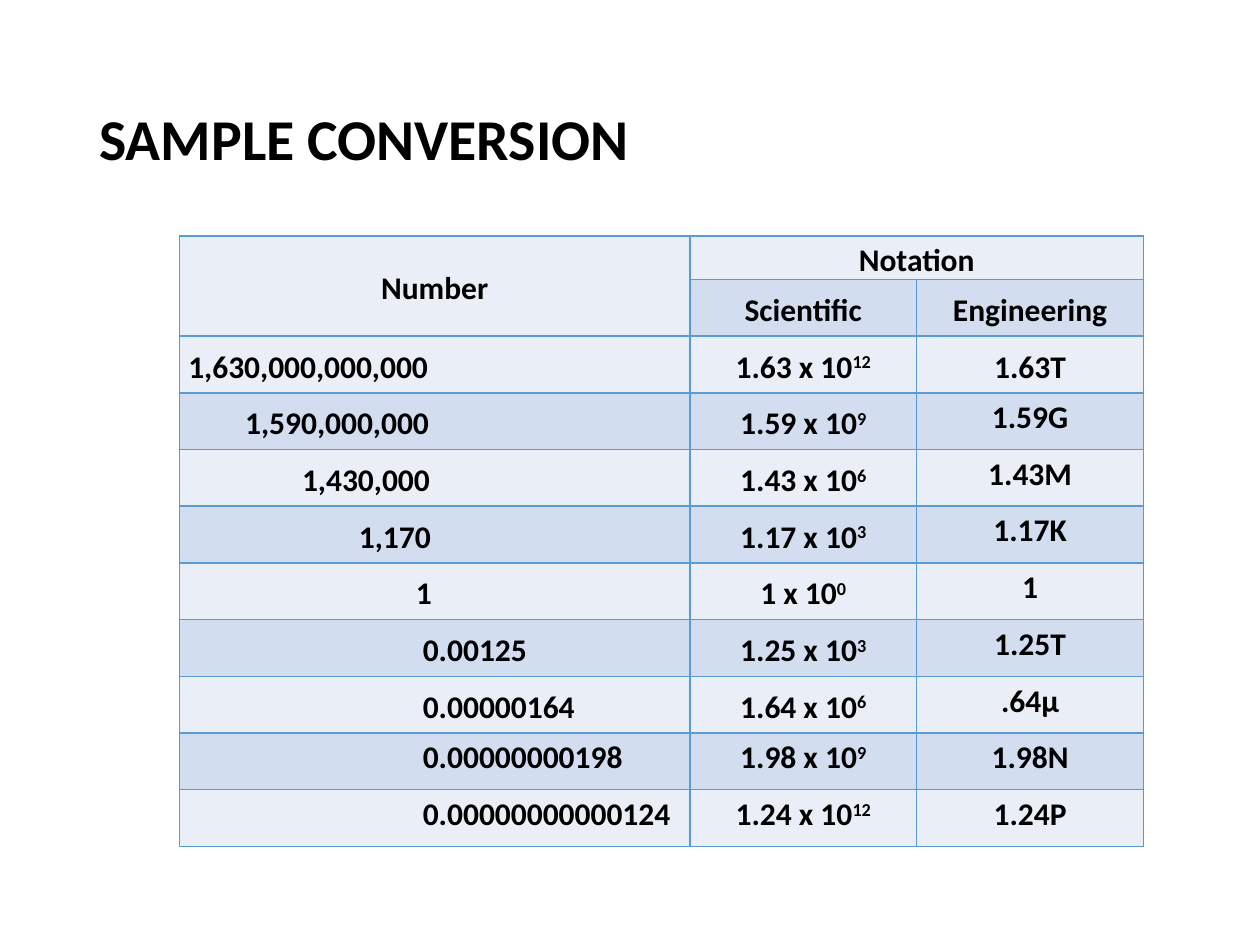
from lxml.etree import SubElement
from pptx import Presentation
from pptx.dml.color import RGBColor
from pptx.enum.text import MSO_ANCHOR as Anchor, PP_ALIGN as Align
from pptx.oxml.ns import qn
from pptx.util import Pt

BLACK = RGBColor(0x00, 0x00, 0x00)
LIGHT = RGBColor(0xEA, 0xEF, 0xF7)
DARK = RGBColor(0xD2, 0xDE, 0xEF)
BORDER = RGBColor(0x5B, 0x9B, 0xD5)
FONT = "Calibri"

TITLE = "SAMPLE CONVERSION"
HEADINGS = [("Number", "Notation", ""), ("", "Scientific", "Engineering")]
CONVERSIONS = [
    ("1,630,000,000,000", "1.63 x 10", "12", "1.63T"),
    ("1,590,000,000", "1.59 x 10", "9", "1.59G"),
    ("1,430,000", "1.43 x 10", "6", "1.43M"),
    ("1,170", "1.17 x 10", "3", "1.17K"),
    ("1", "1 x 10", "0", "1"),
    ("0.00125", "1.25 x 10", "3", "1.25T"),
    ("0.00000164", "1.64 x 10", "6", ".64μ"),
    ("0.00000000198", "1.98 x 10", "9", "1.98N"),
    ("0.00000000000124", "1.24 x 10", "12", "1.24P"),
]
COLUMN_WIDTHS = [291.6, 129.6, 129.6]
FIRST_ROW_HEIGHT, ROW_HEIGHT = 24, 32.4
TABLE_LEFT, TABLE_TOP = 102.6, 134.8
GROUP_INDENT, DECIMAL_INDENT = 32.5, 134
FIRST_TOP_ALIGNED = [9, 9, 3]


def style_font(paragraph, size):
    font = paragraph.font
    font.name, font.size, font.bold = FONT, Pt(size), True
    font.color.rgb = BLACK


def add_borders(cell):
    properties = cell._tc.get_or_add_tcPr()
    for side in ("a:lnL", "a:lnR", "a:lnT", "a:lnB"):
        line = SubElement(properties, qn(side), w=str(Pt(1)))
        fill = SubElement(line, qn("a:solidFill"))
        SubElement(fill, qn("a:srgbClr"), val=str(BORDER))


def fill_cell(cell, row, column, text, exponent=""):
    add_borders(cell)
    cell.fill.solid()
    cell.fill.fore_color.rgb = DARK if row % 2 else LIGHT
    cell.margin_left = cell.margin_right = Pt(5)
    cell.margin_top = cell.margin_bottom = 0
    top_aligned = row >= FIRST_TOP_ALIGNED[column]
    cell.vertical_anchor = Anchor.TOP if top_aligned else Anchor.MIDDLE
    paragraph = cell.text_frame.paragraphs[0]
    paragraph.alignment = Align.CENTER
    paragraph.line_spacing = 1.15
    style_font(paragraph, 18)
    if text:
        paragraph.add_run().text = text
    if exponent:
        run = paragraph.add_run()
        run.text = exponent
        run.font._element.set("baseline", "30000")
    return paragraph


def align_number(paragraph, number, index):
    indent = DECIMAL_INDENT if "." in number else index * GROUP_INDENT
    paragraph.alignment = Align.LEFT
    properties = paragraph._p.get_or_add_pPr()
    properties.set("marL", str(Pt(indent)))
    properties.set("indent", "0")


def add_title(slide):
    box = slide.shapes.add_textbox(Pt(49.7), Pt(28.8), Pt(620.6), Pt(104.4))
    frame = box.text_frame
    frame.word_wrap = True
    frame.vertical_anchor = Anchor.MIDDLE
    paragraph = frame.paragraphs[0]
    paragraph.text = TITLE
    paragraph.line_spacing = 0.9
    style_font(paragraph, 33)


def add_conversion_table(slide):
    row_count = len(HEADINGS) + len(CONVERSIONS)
    heights = [FIRST_ROW_HEIGHT] + [ROW_HEIGHT] * (row_count - 1)
    table = slide.shapes.add_table(
        row_count, len(COLUMN_WIDTHS), Pt(TABLE_LEFT), Pt(TABLE_TOP),
        Pt(sum(COLUMN_WIDTHS)), Pt(sum(heights))).table
    for column, width in zip(table.columns, COLUMN_WIDTHS):
        column.width = Pt(width)
    for row, height in zip(table.rows, heights):
        row.height = Pt(height)
    for row, headings in enumerate(HEADINGS):
        for column, heading in enumerate(headings):
            fill_cell(table.cell(row, column), row, column, heading)
    table.cell(0, 0).merge(table.cell(1, 0))
    table.cell(0, 1).merge(table.cell(0, 2))
    for index, (number, base, exponent, engineering) in enumerate(CONVERSIONS):
        row = index + len(HEADINGS)
        paragraph = fill_cell(table.cell(row, 0), row, 0, number)
        align_number(paragraph, number, index)
        fill_cell(table.cell(row, 1), row, 1, base, exponent)
        fill_cell(table.cell(row, 2), row, 2, engineering)


def main():
    presentation = Presentation()
    presentation.slide_width, presentation.slide_height = Pt(720), Pt(540)
    slide = presentation.slides.add_slide(presentation.slide_layouts[6])
    add_title(slide)
    add_conversion_table(slide)
    presentation.save("out.pptx")


if __name__ == "__main__":
    main()
